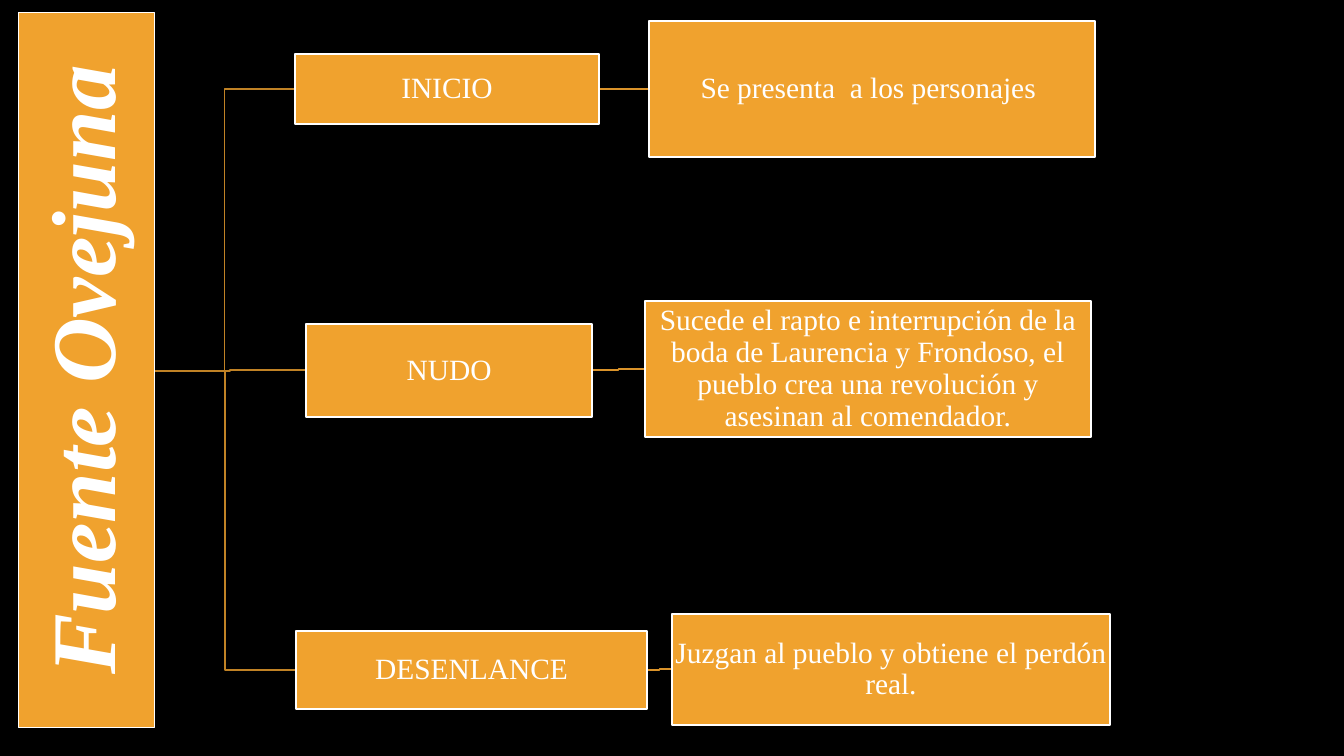
"""Builds the plot outline slide of Fuente Ovejuna."""
from pptx import Presentation
from pptx import util as u
from pptx.dml.color import RGBColor
from pptx.enum import shapes, text

PX_PER_INCH = 100.8
BLACK = RGBColor(0x00, 0x00, 0x00)
WHITE = RGBColor(0xFF, 0xFF, 0xFF)
ORANGE = RGBColor(0xF0, 0xA2, 0x2E)
BRANCH = RGBColor(0xC0, 0x82, 0x25)
TWIG = RGBColor(0xDA, 0x93, 0x2A)

TITLE = (-271, 302, 715, 136)
TITLE_EXIT = (154, 371)
STAGES = [
    ("INICIO", (295, 54, 304, 70),
     "Se presenta  a los personajes ", (649, 21, 446, 136)),
    ("NUDO", (306, 324, 286, 93),
     "Sucede el rapto e interrupción de la boda de Laurencia y Frondoso, "
     "el pueblo crea una revolución y asesinan al comendador.",
     (645, 301, 446, 136)),
    ("DESENLANCE", (296, 631, 351, 78),
     "Juzgan al pueblo y obtiene el perdón real.", (672, 614, 438, 111)),
]


def px(n):
    """Turn pixels into EMU."""
    return u.Inches(n / PX_PER_INCH)


def left_mid(box):
    """Return the middle of a box's left edge."""
    x, y, w, h = box
    return x, y + h // 2


def right_mid(box):
    """Return the middle of a box's right edge."""
    x, y, w, h = box
    return x + w, y + h // 2


def write(sp, words, size=21, bold=False, italic=False, inset=1):
    """Put one centred, formatted paragraph into a shape."""
    tf = sp.text_frame
    tf.word_wrap = True
    tf.vertical_anchor = text.MSO_ANCHOR.MIDDLE
    tf.margin_left = tf.margin_right = px(inset)
    tf.margin_top = tf.margin_bottom = px(inset)
    p = tf.paragraphs[0]
    p.alignment = text.PP_ALIGN.CENTER
    p.line_spacing = 0.9
    r = p.add_run()
    r.text = words
    r.font.name = "Times New Roman"
    r.font.size = u.Pt(size)
    r.font.bold = bold
    r.font.italic = italic
    r.font.color.rgb = WHITE


def add_box(s, box, words, rotation=0, **fmt):
    """Add an orange box with text."""
    sp = s.shapes.add_shape(shapes.MSO_SHAPE.RECTANGLE, *map(px, box))
    sp.shadow.inherit = False
    sp.rotation = rotation
    sp.fill.solid()
    sp.fill.fore_color.rgb = ORANGE
    sp.line.color.rgb = WHITE
    sp.line.width = u.Pt(1.25)
    write(sp, words, **fmt)


def add_elbow(s, start, end, color):
    """Add an open line that bends halfway between two points."""
    (x1, y1), (x2, y2) = start, end
    mid = (x1 + x2) / 2
    path = s.shapes.build_freeform(px(x1), px(y1))
    bends = [(mid, y1), (mid, y2), (x2, y2)]
    path.add_line_segments([(px(x), px(y)) for x, y in bends], close=False)
    sp = path.convert_to_shape()
    sp.shadow.inherit = False
    sp.fill.background()
    sp.line.color.rgb = color
    sp.line.width = u.Pt(1.25)


def main():
    """Build and save the slide."""
    prs = Presentation()
    prs.slide_width, prs.slide_height = px(1344), px(756)
    s = prs.slides.add_slide(prs.slide_layouts[6])
    s.background.fill.solid()
    s.background.fill.fore_color.rgb = BLACK

    for _, stage_box, _, event_box in reversed(STAGES):
        add_elbow(s, right_mid(stage_box), left_mid(event_box), TWIG)
        add_elbow(s, TITLE_EXIT, left_mid(stage_box), BRANCH)

    add_box(s, TITLE, "Fuente Ovejuna", rotation=270,
            size=65, bold=True, italic=True, inset=5)
    for stage, stage_box, event, event_box in STAGES:
        add_box(s, stage_box, stage)
        add_box(s, event_box, event)

    prs.save("out.pptx")


if __name__ == "__main__":
    main()
